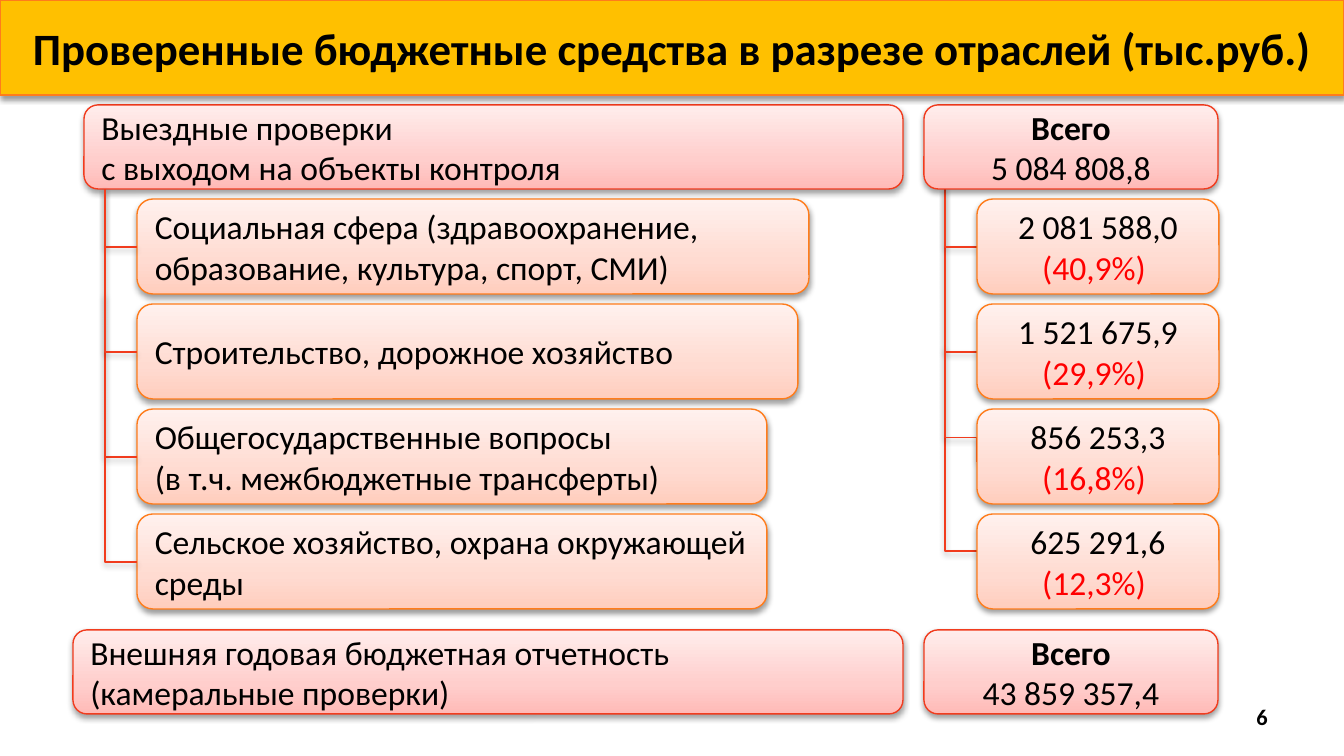
from dataclasses import dataclass
from typing import Optional

import lxml.etree
import pptx
import pptx.dml.color
import pptx.enum.shapes
import pptx.enum.text
import pptx.oxml.ns
import pptx.util

SLIDE_WIDTH, SLIDE_HEIGHT = 1344, 756
EMU_PER_PX = 9144000 / SLIDE_WIDTH
FONT = "Calibri"
COLORS = {
    "text": "000000",
    "share": "FF0000",
    "title": "FFC000",
    "industry_line": "FF7C1B",
    "total_line": "F13C1E",
    "shadow": "000000",
}
GRADIENTS = {
    "industry": {0: "FFCDBD", 35: "FFDBD1", 100: "FFF1EE"},
    "total": {0: "FFBAB7", 35: "FFCECC", 100: "FFEDEC"},
}
ALIGN = pptx.enum.text.PP_ALIGN
SHAPE = pptx.enum.shapes.MSO_SHAPE
qn = pptx.oxml.ns.qn


@dataclass(frozen=True)
class Line:
    text: str
    color: str = "text"
    bold: bool = False
    size: int = 18


@dataclass(frozen=True)
class Box:
    left: int
    top: int
    width: int
    height: int
    kind: str
    lines: tuple[Line, ...]
    align: ALIGN = ALIGN.LEFT


@dataclass(frozen=True)
class Branch:
    trunk: int
    top: int
    bottom: int
    bend: Optional[int] = None


@dataclass(frozen=True)
class Industry:
    name: tuple[str, ...]
    width: int
    amount: str
    share: str


def px(length: float) -> pptx.util.Emu:
    return pptx.util.Emu(round(length * EMU_PER_PX))


def rgb(name: str) -> pptx.dml.color.RGBColor:
    return pptx.dml.color.RGBColor.from_string(COLORS[name])


def add_element(parent, tag: str, **attributes):
    element = lxml.etree.SubElement(parent, qn(tag))
    for key, value in attributes.items():
        element.set(key, str(value))
    return element


def cast_shadow(properties) -> None:
    effects = properties.find(qn("a:effectLst"))
    if effects is None:
        effects = add_element(properties, "a:effectLst")
    shadow = add_element(effects, "a:outerShdw", blurRad=40000, dist=20000,
                         dir=5400000, rotWithShape=0)
    color = add_element(shadow, "a:srgbClr", val=COLORS["shadow"])
    add_element(color, "a:alpha", val=38000)


def outline(item, color: str) -> None:
    item.line.color.rgb = rgb(color)
    item.line.width = pptx.util.Pt(0.75)


def fill_gradient(shape, stops: dict[int, str]) -> None:
    shape.fill.gradient()
    shape.fill.gradient_angle = 90
    stop_list = shape._element.spPr.find(".//" + qn("a:gsLst"))
    for default_stop in list(stop_list):
        stop_list.remove(default_stop)
    for position, color in stops.items():
        stop = add_element(stop_list, "a:gs", pos=position * 1000)
        add_element(stop, "a:srgbClr", val=color)


def write_lines(frame, lines: tuple[Line, ...], align: ALIGN) -> None:
    frame.word_wrap = True
    frame.vertical_anchor = pptx.enum.text.MSO_ANCHOR.MIDDLE
    for index, line in enumerate(lines):
        paragraph = frame.add_paragraph() if index else frame.paragraphs[0]
        paragraph.alignment = align
        run = paragraph.add_run()
        run.text = line.text
        run.font.name = FONT
        run.font.size = pptx.util.Pt(line.size)
        run.font.bold = line.bold
        run.font.color.rgb = rgb(line.color)


def draw_box(slide, box: Box) -> None:
    is_title = box.kind == "title"
    preset = SHAPE.RECTANGLE if is_title else SHAPE.ROUNDED_RECTANGLE
    shape = slide.shapes.add_shape(preset, px(box.left), px(box.top),
                                   px(box.width), px(box.height))
    if is_title:
        shape.fill.solid()
        shape.fill.fore_color.rgb = rgb("title")
    else:
        fill_gradient(shape, GRADIENTS[box.kind])
    outline(shape, "total_line" if box.kind == "total" else "industry_line")
    shape.shadow.inherit = False
    cast_shadow(shape._element.spPr)
    write_lines(shape.text_frame, box.lines, box.align)


def draw_branch(slide, branch: Branch) -> None:
    """Draw an elbow that runs down the trunk and then right to a box."""
    length, reach = branch.bottom - branch.top, 32
    # The frame is turned a quarter about its centre, so its sides swap.
    left = branch.trunk + (reach - length) / 2
    top = branch.top + (length - reach) / 2
    elbow = slide.shapes.add_connector(
        pptx.enum.shapes.MSO_CONNECTOR.ELBOW,
        px(left), px(top), px(left + length), px(top + reach))
    properties = elbow._element.spPr
    frame = properties.find(qn("a:xfrm"))
    frame.set("rot", "16200000")
    frame.set("flipH", "1")
    geometry = properties.find(qn("a:prstGeom"))
    if branch.bend is None:
        geometry.set("prst", "bentConnector2")
    else:
        add_element(geometry.find(qn("a:avLst")), "a:gd", name="adj1",
                    fmla=f"val {branch.bend * 1000}")
    outline(elbow, "total_line")
    cast_shadow(properties)


INDUSTRIES = (
    Industry(("Социальная сфера (здравоохранение, образование, культура, спорт, СМИ)",),
             672, "2 081 588,0", "(40,9%) "),
    Industry(("Строительство, дорожное хозяйство",), 661, "1 521 675,9", "(29,9%) "),
    Industry(("Общегосударственные вопросы", "(в т.ч. межбюджетные трансферты)"),
             630, "856 253,3", "(16,8%) "),
    Industry(("Сельское хозяйство, охрана окружающей среды",),
             630, "625 291,6", "(12,3%) "),
)
AMOUNT_BRANCHES = (Branch(945, 179, 551), Branch(945, 189, 352),
                   Branch(945, 347, 462, bend=79), Branch(945, 189, 247))
NAME_BRANCHES = (Branch(105, 189, 457), Branch(105, 294, 562),
                 Branch(105, 189, 247), Branch(105, 189, 352))


def industry_boxes() -> list[Box]:
    boxes = []
    for row, industry in enumerate(INDUSTRIES):
        top = 199 + 105 * row
        names = tuple(Line(text) for text in industry.name)
        figures = (Line(industry.amount), Line(industry.share, "share"))
        boxes += [Box(137, top, industry.width, 95, "industry", names),
                  Box(977, top, 242, 95, "industry", figures, ALIGN.CENTER)]
    return boxes


def total_boxes(left: int, top: int, names: tuple[str, str], amount: str) -> list[Box]:
    figures = (Line("Всего", bold=True), Line(amount))
    return [Box(left, top, 903 - left, 84, "total", tuple(Line(name) for name in names)),
            Box(924, top, 294, 84, "total", figures, ALIGN.CENTER)]


def main() -> None:
    deck = pptx.Presentation()
    deck.slide_width, deck.slide_height = px(SLIDE_WIDTH), px(SLIDE_HEIGHT)
    slide = deck.slides.add_slide(deck.slide_layouts[6])

    for branch in AMOUNT_BRANCHES:
        draw_branch(slide, branch)
    for box in (
        industry_boxes()
        + total_boxes(73, 630, ("Внешняя годовая бюджетная отчетность",
                                "(камеральные проверки)"), "43 859 357,4")
        + total_boxes(84, 105, ("Выездные проверки",
                                "с выходом на объекты контроля"), "5 084 808,8")
    ):
        draw_box(slide, box)
    for branch in NAME_BRANCHES:
        draw_branch(slide, branch)

    title = Line("Проверенные бюджетные средства в разрезе отраслей (тыс.руб.)",
                 bold=True, size=24)
    draw_box(slide, Box(0, 0, SLIDE_WIDTH, 95, "title", (title,), ALIGN.CENTER))

    page_number = slide.shapes.add_textbox(px(1243), px(696), px(38), px(41))
    write_lines(page_number.text_frame, (Line("6", bold=True, size=12),), ALIGN.RIGHT)
    deck.save("out.pptx")


if __name__ == "__main__":
    main()
